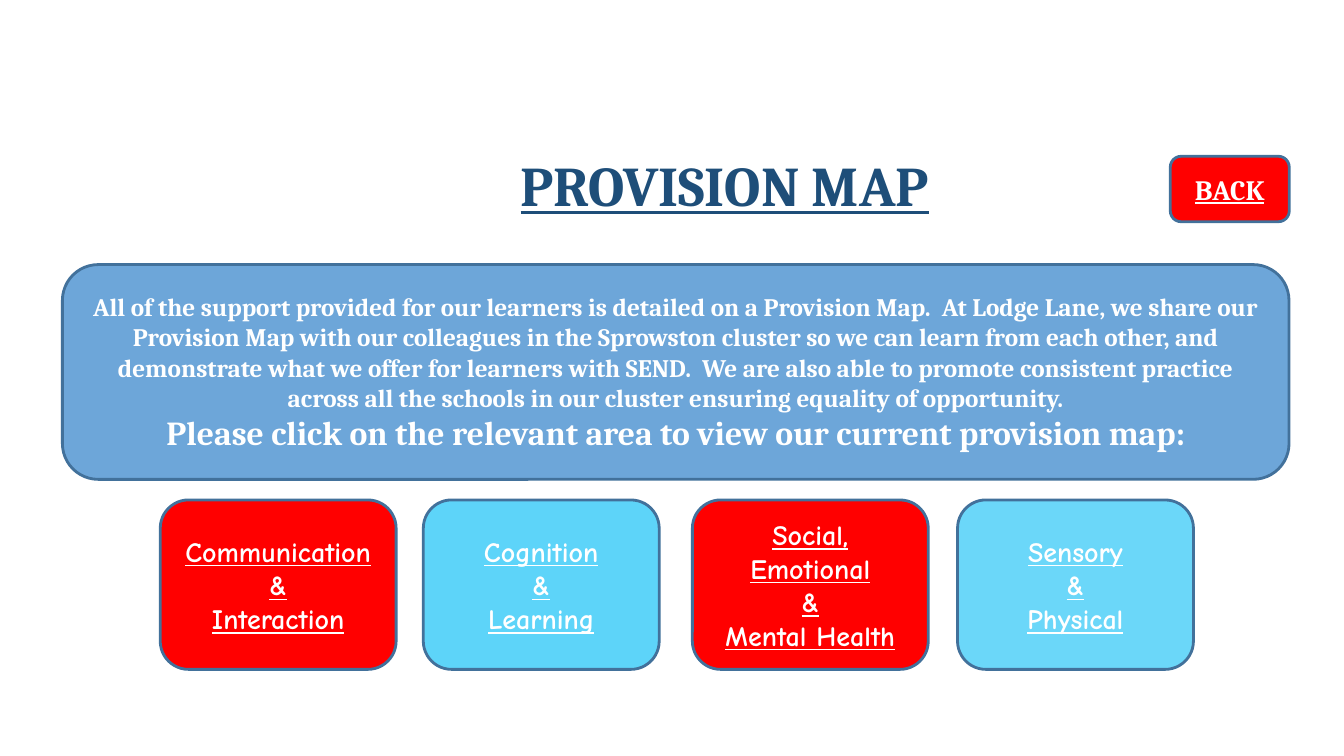
from dataclasses import dataclass

from pptx import Presentation
from pptx.dml.color import RGBColor
from pptx.enum.shapes import MSO_SHAPE
from pptx.enum.text import MSO_ANCHOR, PP_ALIGN
from pptx.util import Pt


@dataclass(frozen=True)
class Theme:
    serif: str = "Cambria"
    rounded: str = "Comic Neue"
    navy: str = "1E4E79"
    outline: str = "42719B"
    panel: str = "6DA6D9"
    red: str = "FF0000"
    sky: str = "5DD4F9"
    pale_sky: str = "6BD7F9"
    white: str = "FFFFFF"
    title: int = 40
    prompt: int = 24
    button: int = 20
    body: int = 18
    line: int = 2


class SlideBuilder:
    def __init__(self, slide, theme):
        self.s = slide
        self.theme = theme

    def set_lines(self, sp, lines, font, color, underline=False):
        """Fill a shape with centred bold lines, given as (text, size)."""
        tf = sp.text_frame
        tf.word_wrap = True
        tf.vertical_anchor = MSO_ANCHOR.MIDDLE
        tf.text = "\n".join(text for text, size in lines)
        for p, (text, size) in zip(tf.paragraphs, lines):
            p.alignment = PP_ALIGN.CENTER
            for r in p.runs:
                r.font.name = font
                r.font.size = Pt(size)
                r.font.bold = True
                r.font.underline = underline
                r.font.color.rgb = RGBColor.from_string(color)
        return tf

    def title(self, box, text):
        sp = self.s.shapes.add_textbox(*map(Pt, box))
        t = self.theme
        tf = self.set_lines(sp, [(text, t.title)], t.serif, t.navy, underline=True)
        tf.paragraphs[0].line_spacing = 0.9

    def panel(self, box, fill, lines, font, underline=False):
        sp = self.s.shapes.add_shape(MSO_SHAPE.ROUNDED_RECTANGLE, *map(Pt, box))
        sp.shadow.inherit = False
        sp.fill.solid()
        sp.fill.fore_color.rgb = RGBColor.from_string(fill)
        sp.line.color.rgb = RGBColor.from_string(self.theme.outline)
        sp.line.width = Pt(self.theme.line)
        self.set_lines(sp, lines, font, self.theme.white, underline)

    def button(self, box, fill, texts, font):
        lines = [(text, self.theme.button) for text in texts]
        self.panel(box, fill, lines, font, underline=True)


def main():
    prs = Presentation()
    prs.slide_width, prs.slide_height = Pt(960), Pt(540)
    theme = Theme()
    s = SlideBuilder(prs.slides.add_slide(prs.slide_layouts[6]), theme)

    # Heading
    s.title((103.7, 94.3, 828, 80.6), "PROVISION MAP")

    # Introduction
    intro = (
        "All of the support provided for our learners is detailed on a "
        "Provision Map.  At Lodge Lane, we share our Provision Map with our "
        "colleagues in the Sprowston cluster so we can learn from each other, "
        "and demonstrate what we offer for learners with SEND.  We are also "
        "able to promote consistent practice across all the schools in our "
        "cluster ensuring equality of opportunity."
    )
    prompt = "Please click on the relevant area to view our current provision map:"
    s.panel((44.6, 189, 876.2, 153.4), theme.panel,
            [(intro, theme.body), (prompt, theme.prompt)], theme.serif)

    # Areas of need
    areas = [
        (114.5, theme.red, "Communication", "Interaction"),
        (302.4, theme.sky, "Cognition", "Learning"),
        (494.6, theme.red, "Social, Emotional", "Mental Health"),
        (684, theme.pale_sky, "Sensory", "Physical"),
    ]
    for left, fill, first, second in areas:
        s.button((left, 357.1, 168.5, 121), fill, [first, "&", second], theme.rounded)

    # Navigation
    s.button((835.9, 111.6, 85, 46.8), theme.red, ["BACK"], theme.serif)

    prs.save("out.pptx")


if __name__ == "__main__":
    main()
